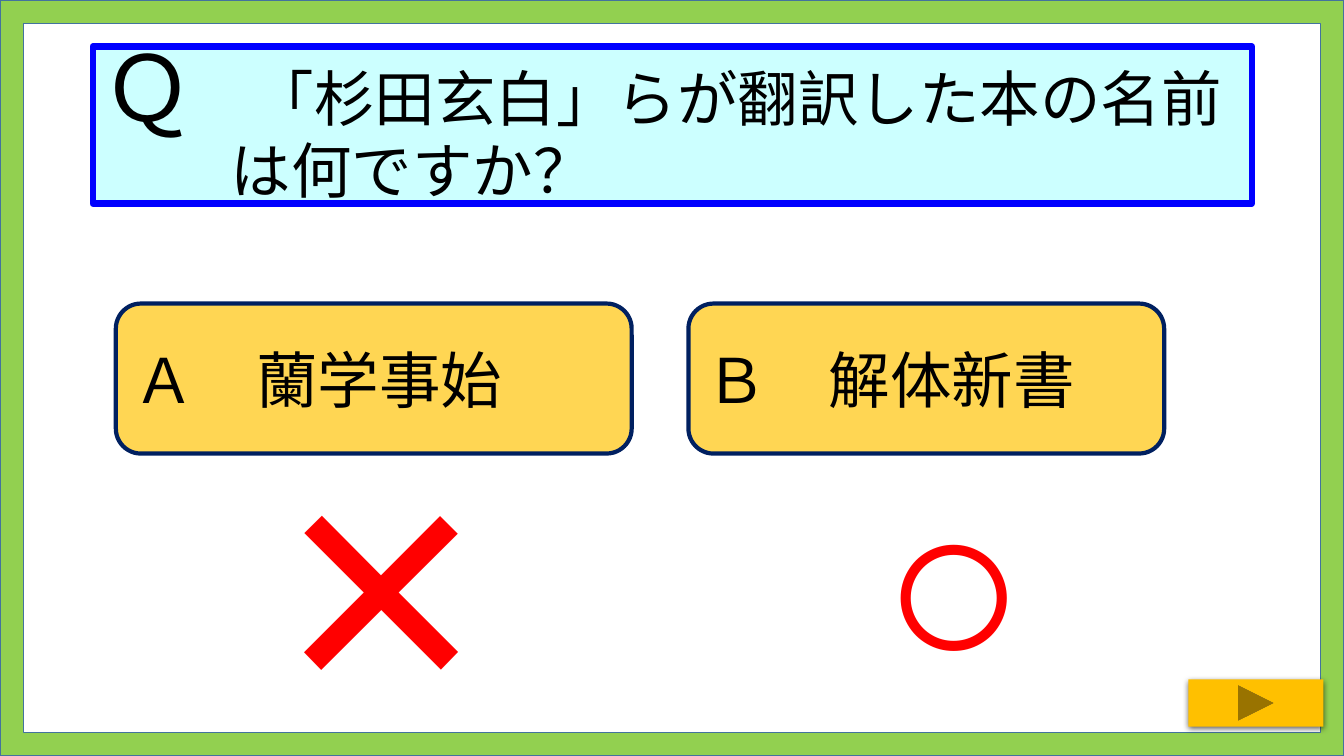
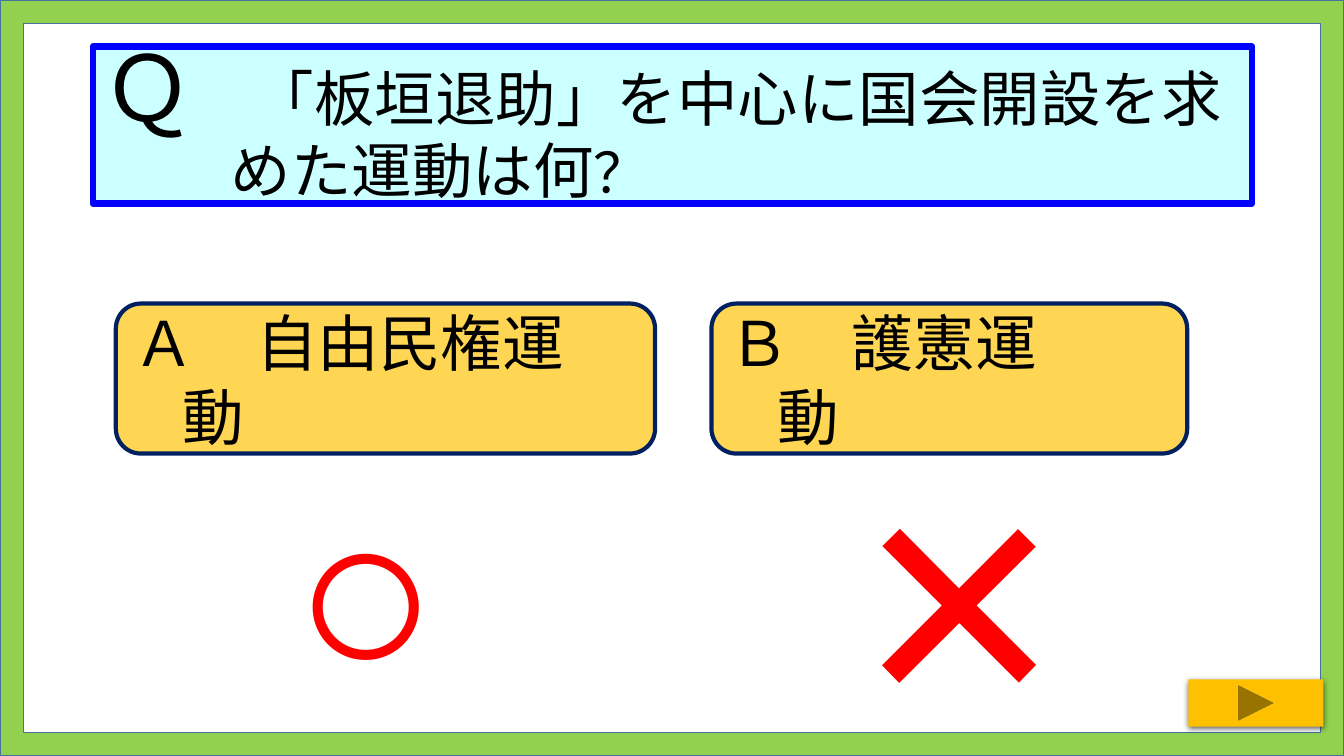
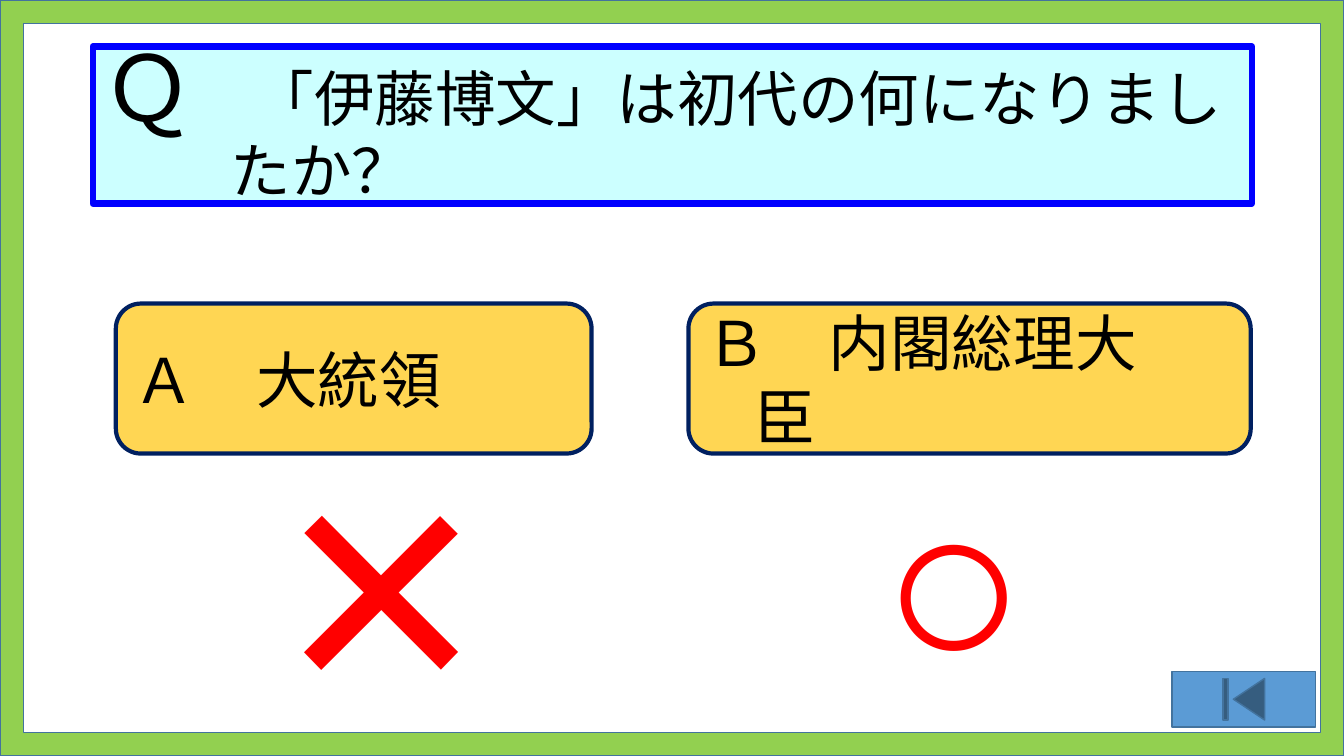
from lxml.etree import SubElement
from pptx import Presentation
from pptx.dml.color import RGBColor
from pptx.enum.shapes import MSO_SHAPE as Preset
from pptx.enum.text import MSO_ANCHOR as Anchor, MSO_AUTO_SIZE as AutoSize, PP_ALIGN as Align
from pptx.oxml.ns import qn
from pptx.util import Cm, Pt

GOTHIC, ARIAL = "Noto Sans CJK JP", "Arial"
GREEN, STEEL, PALE, BLUE = "92D050", "43739E", "CCFFFF", "0000FF"
YELLOW, NAVY, RED, BLACK = "FFD653", "002060", "FF0000", "000000"
SLIDE_W, SLIDE_H = 33.87, 19.05
CARD_TOP, CARD_H, CARD_SIZE = 7.65, 3.78, 44
MARK_SIDE = 7.01
MARK_SIZES = {"○": 172, "×": 247}

NEXT = dict(preset=Preset.ACTION_BUTTON_FORWARD_OR_NEXT, place=(29.95, 17.12, 3.4, 1.19),
            fill="FFC000", shadow=True)
FIRST = dict(preset=Preset.ACTION_BUTTON_BEGINNING, place=(29.54, 16.92, 3.61, 1.4),
             fill="5B9BD5", line=STEEL, weight=1)

# answers: text, left, width, characters on the first line (None when all fit)
QUIZ = [
    dict(question=[("「杉田玄白」らが翻訳した本の名前は何ですか？", 43.2)],
         answers=[("Ａ　蘭学事始", 2.92, 13, None), ("Ｂ　解体新書", 17.35, 11.99, None)],
         marks=[("○", 20.55, 10.39), ("×", 6.12, 10.31)], button=NEXT),
    dict(question=[("「板垣退助」を中心に国会開設を求めた運動は何", 43.2), ("？", 39.6)],
         answers=[("Ａ　自由民権運動", 2.92, 13.59, 7), ("Ｂ　護憲運動", 17.93, 11.99, 5)],
         marks=[("○", 5.72, 10.62), ("×", 20.68, 10.62)], button=NEXT),
    dict(question=[("「伊藤博文」は初代の何になりましたか？", 43.2)],
         answers=[("Ａ　大統領", 2.92, 11.99, None), ("Ｂ　内閣総理大臣", 17.35, 14.17, 7)],
         marks=[("○", 20.55, 10.39), ("×", 6.12, 10.31)], button=FIRST),
]


def color(code):
    return RGBColor.from_string(code)


def write(frame, runs, font=GOTHIC, ink=BLACK, align=Align.LEFT, hanging=0, spacing=None):
    frame.word_wrap = True
    frame.vertical_anchor = Anchor.MIDDLE
    paragraph = frame.paragraphs[0]
    paragraph.alignment = align
    if spacing:
        paragraph.line_spacing = spacing
    if hanging:
        properties = paragraph._p.get_or_add_pPr()
        properties.set("marL", str(Cm(hanging)))
        properties.set("indent", str(-Cm(hanging)))
    for text, size in runs:
        run = paragraph.add_run()
        run.text = text
        run.font.size = Pt(size)
        run.font.name = font
        run.font.color.rgb = color(ink)
        SubElement(run._r.get_or_add_rPr(), qn("a:ea"), typeface=font)


def draw(slide, preset, place, fill, line=None, weight=1, adjust=None, shadow=False):
    shape = slide.shapes.add_shape(preset, *map(Cm, place))
    shape.shadow.inherit = False
    shape.fill.solid()
    shape.fill.fore_color.rgb = color(fill)
    if line:
        shape.line.color.rgb = color(line)
        shape.line.width = Pt(weight)
    else:
        shape.line.fill.background()
    if adjust:
        shape.adjustments[0] = adjust
    if shadow:
        effects = shape._element.spPr.find(qn("a:effectLst"))
        outer = SubElement(effects, qn("a:outerShdw"), blurRad=str(Pt(4.5)), dist=str(Pt(1.5)),
                           dir="5400000", algn="ctr", rotWithShape="0")
        tint = SubElement(outer, qn("a:srgbClr"), val=BLACK)
        SubElement(tint, qn("a:alpha"), val="63000")
    return shape


def add_answer(slide, text, left, width, first_line):
    card = draw(slide, Preset.ROUNDED_RECTANGLE, (left, CARD_TOP, width, CARD_H),
                YELLOW, NAVY, 3, adjust=0.167)
    if first_line:
        corners = 2 * 0.29 * 0.167 * CARD_H
        room = Pt((first_line + 0.5) * CARD_SIZE)
        card.text_frame.margin_right = Cm(width - 0.25 - corners) - room
    write(card.text_frame, [(text, CARD_SIZE)], hanging=1.24)


def add_mark(slide, symbol, left, top):
    mark = slide.shapes.add_textbox(Cm(left), Cm(top), Cm(MARK_SIDE), Cm(MARK_SIDE))
    mark.text_frame.auto_size = AutoSize.SHAPE_TO_FIT_TEXT
    mark.text_frame.margin_top = Cm(1.25)
    write(mark.text_frame, [(symbol, MARK_SIZES[symbol])], font=ARIAL, ink=RED, align=Align.CENTER)


def add_quiz(deck, question, answers, marks, button):
    slide = deck.slides.add_slide(deck.slide_layouts[6])
    draw(slide, Preset.FRAME, (0, 0, SLIDE_W, SLIDE_H), GREEN, STEEL, adjust=0.031)
    banner = draw(slide, Preset.RECTANGLE, (2.34, 1.17, 29.21, 3.96), PALE, BLUE, 4.5)
    write(banner.text_frame, [("Ｑ", 64.8), ("　", 43.2), *question], hanging=3.23, spacing=0.9)
    for answer in answers:
        add_answer(slide, *answer)
    for mark in marks:
        add_mark(slide, *mark)
    draw(slide, **button)


def main():
    """Build the history quiz, one question per slide."""
    deck = Presentation()
    deck.slide_width, deck.slide_height = Cm(SLIDE_W), Cm(SLIDE_H)
    for quiz in QUIZ:
        add_quiz(deck, **quiz)
    deck.save("out.pptx")


if __name__ == "__main__":
    main()
